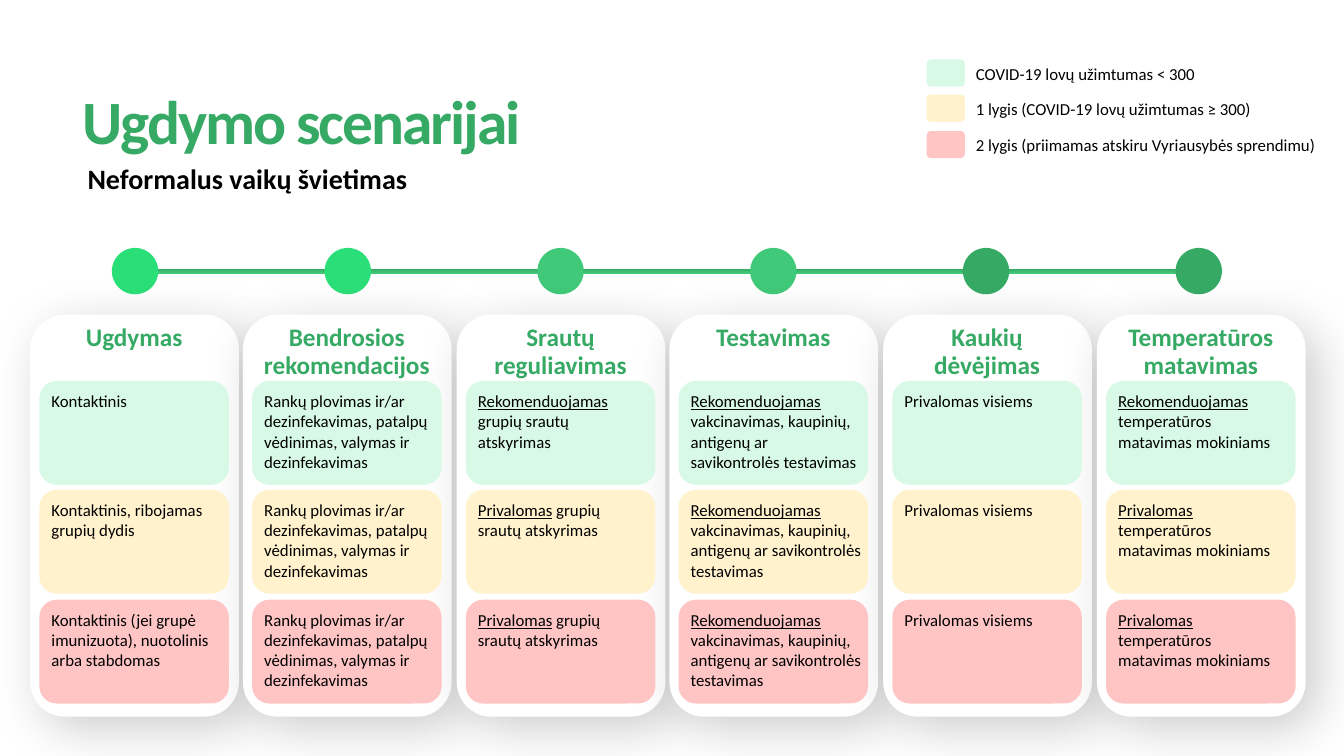
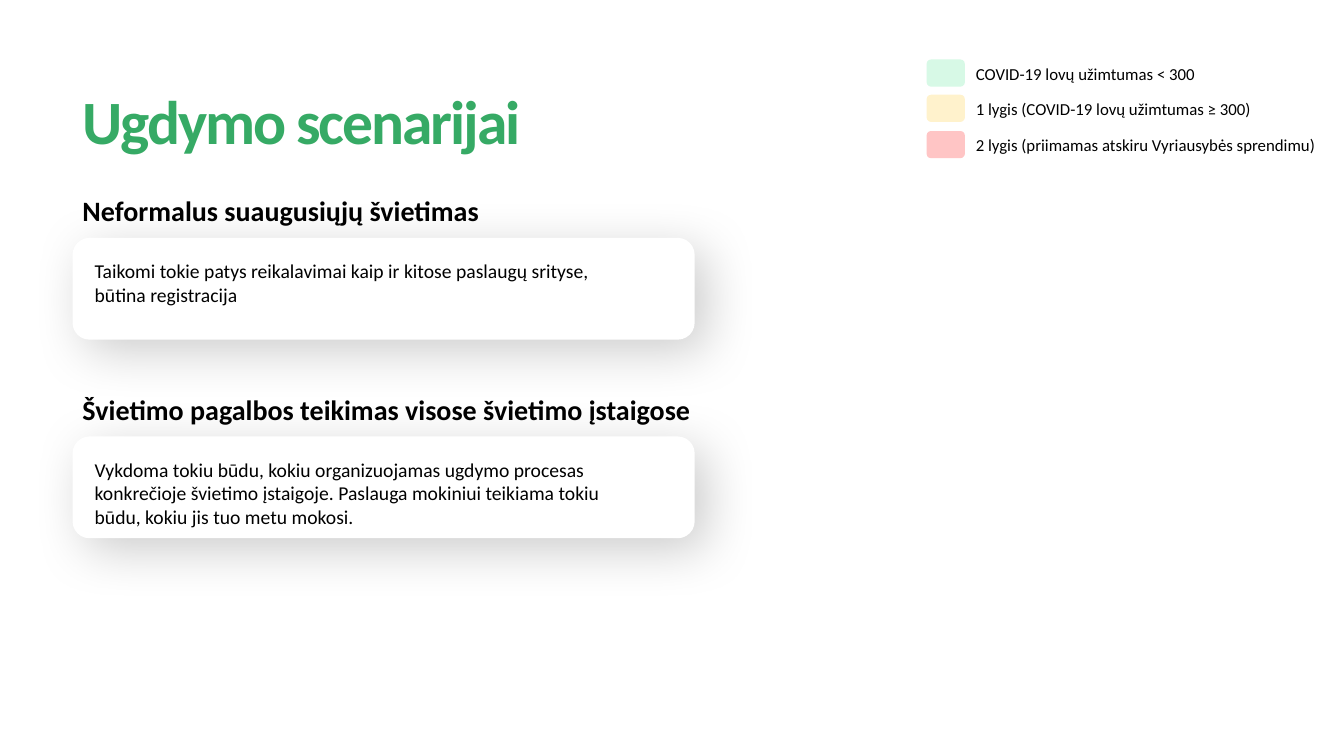
import lxml.etree
import pptx
import pptx.dml.color
import pptx.enum.shapes
import pptx.enum.text
import pptx.oxml.ns
import pptx.util

PX = 9144
FONT = "Calibri"
COLORS = {
    "title": "36AA65",
    "text": "000000",
    "card": "FFFFFF",
    "bright": "2BDF78",
    "medium": "40C978",
    "dark": "36AA65",
    "normal": "D7F9E6",
    "level1": "FFF2CC",
    "level2": "FFC5C5",
}
LEVELS = [
    ("normal", "COVID-19 lovų užimtumas < 300"),
    ("level1", "1 lygis (COVID-19 lovų užimtumas ≥ 300)"),
    ("level2", "2 lygis (priimamas atskiru Vyriausybės sprendimu)"),
]
HYGIENE = ("", "Rankų plovimas ir/ar dezinfekavimas, patalpų vėdinimas, valymas ir dezinfekavimas")
FLOWS = " grupių srautų atskyrimas"
TESTING = ("Rekomenduojamas", " vakcinavimas, kaupinių, antigenų ar savikontrolės testavimas")
MASKS = ("", "Privalomas visiems")
TEMPERATURE = " temperatūros matavimas mokiniams"
MEASURES = [
    ("Ugdymas", "bright", [
        ("", "Kontaktinis"),
        ("", "Kontaktinis, ribojamas grupių dydis"),
        ("", "Kontaktinis (jei grupė imunizuota), nuotolinis arba stabdomas"),
    ]),
    ("Bendrosios rekomendacijos", "bright", [HYGIENE] * 3),
    ("Srautų reguliavimas", "medium", [
        ("Rekomenduojamas", FLOWS), ("Privalomas", FLOWS), ("Privalomas", FLOWS),
    ]),
    ("Testavimas", "medium", [TESTING] * 3),
    ("Kaukių dėvėjimas", "dark", [MASKS] * 3),
    ("Temperatūros matavimas", "dark", [
        ("Rekomenduojamas", TEMPERATURE), ("Privalomas", TEMPERATURE), ("Privalomas", TEMPERATURE),
    ]),
]
WIDE_CELLS = {("Testavimas", 1), ("Testavimas", 2)}
SERVICES = [
    ("Neformalus suaugusiųjų švietimas",
     "Taikomi tokie patys reikalavimai kaip ir kitose paslaugų srityse, būtina registracija"),
    ("Švietimo pagalbos teikimas visose švietimo įstaigose",
     "Vykdoma tokiu būdu, kokiu organizuojamas ugdymo procesas konkrečioje švietimo įstaigoje. "
     "Paslauga mokiniui teikiama tokiu būdu, kokiu jis tuo metu mokosi."),
]


def emu(*lengths):
    return [pptx.util.Emu(length * PX) for length in lengths]


def rgb(name):
    return pptx.dml.color.RGBColor.from_string(COLORS[name])


def write_text(shape, text, size=12, color="text", bold=False, lead="", align="LEFT",
               anchor="TOP", line_spacing=None, tracking=None, insets=(10, 5, 10, 5)):
    frame = shape.text_frame
    frame.word_wrap = True
    frame.auto_size = pptx.enum.text.MSO_AUTO_SIZE.NONE
    frame.vertical_anchor = getattr(pptx.enum.text.MSO_ANCHOR, anchor)
    frame.margin_left, frame.margin_top, frame.margin_right, frame.margin_bottom = emu(*insets)
    paragraph = frame.paragraphs[0]
    paragraph.alignment = getattr(pptx.enum.text.PP_ALIGN, align)
    if line_spacing:
        paragraph.line_spacing = line_spacing
    for content, underline in ((lead, True), (text, False)):
        if not content:
            continue
        run = paragraph.add_run()
        run.text = content
        run.font.name = FONT
        run.font.size = pptx.util.Pt(size)
        run.font.bold = bold
        run.font.underline = underline
        run.font.color.rgb = rgb(color)
        if tracking:
            run.font._element.set("spc", str(tracking))


def add_label(slide, box, text, **text_format):
    write_text(slide.shapes.add_textbox(*emu(*box)), text, **text_format)


def add_block(slide, kind, box, color):
    shape_type = getattr(pptx.enum.shapes.MSO_SHAPE, kind)
    shape = slide.shapes.add_shape(shape_type, *emu(*box))
    shape.shadow.inherit = False
    shape.fill.solid()
    shape.fill.fore_color.rgb = rgb(color)
    shape.line.fill.background()
    return shape


def add_card(slide, box):
    card = add_block(slide, "ROUNDED_RECTANGLE", box, "card")
    qn = pptx.oxml.ns.qn
    effects = card._element.spPr.find(qn("a:effectLst"))
    shadow = lxml.etree.SubElement(
        effects, qn("a:outerShdw"), blurRad=str(pptx.util.Pt(37)), dist=str(pptx.util.Pt(12)),
        dir=str(43 * 60000), algn="tl", rotWithShape="0")
    shade = lxml.etree.SubElement(shadow, qn("a:srgbClr"), val=COLORS["text"])
    lxml.etree.SubElement(shade, qn("a:alpha"), val="20000")
    return card


def add_legend(slide, left, top):
    for index, (color, text) in enumerate(LEVELS):
        row_top = top + index * 71 // 2
        add_block(slide, "ROUNDED_RECTANGLE", (left, row_top, 38, 27), color)
        add_label(slide, (left + 39, row_top - 1, 374, 30), text)


def add_scenario_slide(presentation):
    slide = presentation.slides.add_slide(presentation.slide_layouts[5])
    title = slide.shapes.title
    title.left, title.top, title.width, title.height = emu(72, 85, 1227, 77)
    write_text(title, "Ugdymo scenarijai", size=44, color="title", bold=True,
               anchor="BOTTOM", line_spacing=0.9, tracking=-150)
    add_legend(slide, 919, 59)
    return slide


def add_timeline(slide, left, top, pitch, diameter):
    bar_box = (left + 27, top + 21, pitch * (len(MEASURES) - 1), 5)
    bar = add_block(slide, "RECTANGLE", bar_box, "medium")
    bar.fill.gradient()
    bar.fill.gradient_angle = 270
    for stop, color, position in zip(bar.fill.gradient_stops, ("dark", "medium"), (0, 0.81)):
        stop.color.rgb = rgb(color)
        stop.position = position
    for index, (_, color, _) in enumerate(MEASURES):
        add_block(slide, "OVAL", (left + index * pitch, top, diameter, diameter), color)


def fill_card(slide, left, top, heading, cells):
    add_label(slide, (left + 9, top + 4, 188, 66), heading, size=18, color="title",
              bold=True, align="CENTER", line_spacing=pptx.util.Pt(20))
    for row, ((color, _), (lead, text)) in enumerate(zip(LEVELS, cells)):
        box = (left + 9, top + 66 + row * 217 // 2, 188, 103)
        cell = add_block(slide, "ROUNDED_RECTANGLE", box, color)
        right = 0 if (heading, row) in WIDE_CELLS else 5
        write_text(cell, text, lead=lead, insets=(7, 5, right, 0))


def add_measure_cards(slide, left, top, width, height):
    card_width = 207
    lefts = [left + index * (width - card_width) // (len(MEASURES) - 1)
             for index in range(len(MEASURES))]
    for card_left in lefts:
        add_card(slide, (card_left, top, card_width, height))
    for card_left, (heading, _, cells) in zip(lefts, MEASURES):
        fill_card(slide, card_left, top, heading, cells)


def add_service(slide, left, top, heading, text):
    add_label(slide, (left, top, 1233, 44), heading, size=20, bold=True)
    card = add_card(slide, (left, top + 49, 617, 101))
    write_text(card, text, size=14, insets=(17, 16, 51, 0))


def build_children_slide(presentation):
    slide = add_scenario_slide(presentation)
    add_label(slide, (77, 155, 1233, 44), "Neformalus vaikų švietimas", size=20, bold=True)
    add_timeline(slide, 111, 246, 211, 46)
    add_measure_cards(slide, 30, 312, 1265, 399)


def build_services_slide(presentation):
    slide = add_scenario_slide(presentation)
    for index, (heading, text) in enumerate(SERVICES):
        add_service(slide, 72, 187 + index * 197, heading, text)


def main():
    presentation = pptx.Presentation()
    presentation.slide_width, presentation.slide_height = emu(1333, 750)
    build_children_slide(presentation)
    build_services_slide(presentation)
    presentation.save("out.pptx")


if __name__ == "__main__":
    main()
